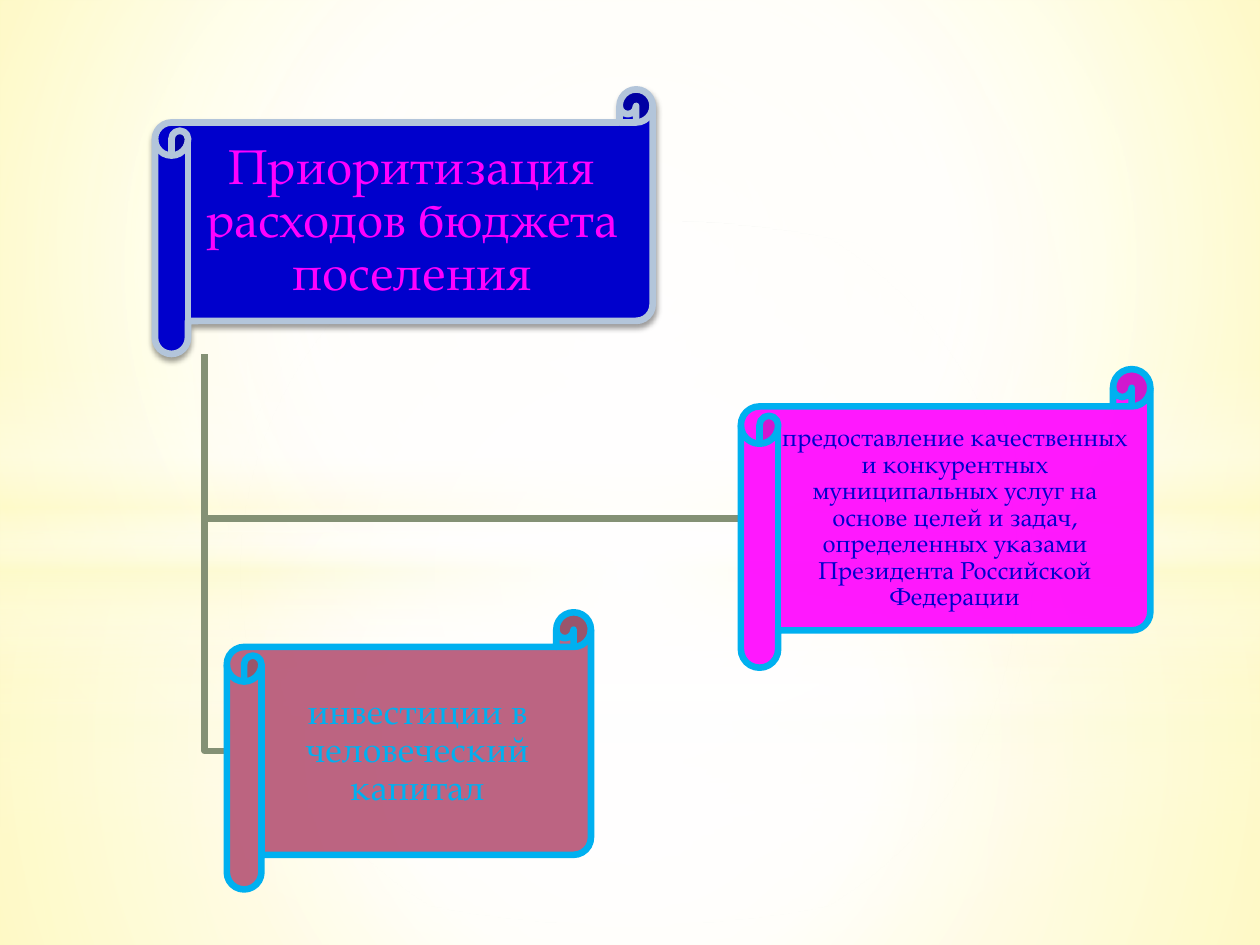
from dataclasses import dataclass

from lxml.etree import SubElement
from pptx import Presentation
from pptx.dml.color import RGBColor
from pptx.enum.shapes import MSO_SHAPE as Preset
from pptx.enum.text import MSO_ANCHOR as Anchor, PP_ALIGN as Align
from pptx.oxml.ns import qn
from pptx.util import Inches, Pt

FONT = "TeX Gyre Pagella"
CENTRE = (50, 50, 50, 50)
BRANCH_WIDTH = 3.78


@dataclass
class Glow:
    """A soft background layer; stops are (position, colour, opacity) in percent."""
    preset: Preset
    top: float
    height: float
    stops: list
    centre: tuple | None = CENTRE


@dataclass
class Scroll:
    text: str
    box: tuple
    fill: str
    line: str
    line_width: float
    text_color: str
    size: int
    inset: tuple  # horizontal, vertical
    opacity: int = 100
    shadow: bool = False


def rgb(color: str) -> RGBColor:
    return RGBColor.from_string(color)


def add_alpha(color_element, percent: float) -> None:
    SubElement(color_element, qn("a:alpha"), val=str(int(percent * 1000)))


def set_gradient(properties, stops: list, centre: tuple | None) -> None:
    """Rewrite the gradient in shape or background properties."""
    gradient = properties.find(qn("a:gradFill"))
    for child in list(gradient):
        gradient.remove(child)
    stop_list = SubElement(gradient, qn("a:gsLst"))
    for position, color, opacity in stops:
        stop = SubElement(stop_list, qn("a:gs"), pos=str(position * 1000))
        add_alpha(SubElement(stop, qn("a:srgbClr"), val=color), opacity)
    if centre is None:
        SubElement(gradient, qn("a:lin"), ang="5400000", scaled="0")
    else:
        circle = SubElement(gradient, qn("a:path"), path="circle")
        sides = {side: str(value * 1000) for side, value in zip("ltrb", centre)}
        SubElement(circle, qn("a:fillToRect"), **sides)


def add_glow(slide, glow: Glow) -> None:
    shape = slide.shapes.add_shape(
        glow.preset, 0, Inches(glow.top), Inches(10), Inches(glow.height))
    shape.shadow.inherit = False
    shape.line.fill.background()
    shape.fill.gradient()
    set_gradient(shape.element.spPr, glow.stops, glow.centre)


def add_branch(slide, start: tuple, end: tuple) -> None:
    """Draw an elbow that goes down, then right."""
    (left, top), (right, bottom) = start, end
    builder = slide.shapes.build_freeform(Inches(left), Inches(top))
    builder.add_line_segments(
        [(Inches(left), Inches(bottom)), (Inches(right), Inches(bottom))], close=False)
    shape = builder.convert_to_shape()
    shape.shadow.inherit = False
    shape.fill.background()
    shape.line.color.rgb = rgb("849175")
    shape.line.width = Pt(BRANCH_WIDTH)


def add_scroll(slide, scroll: Scroll) -> None:
    shape = slide.shapes.add_shape(
        Preset.HORIZONTAL_SCROLL, *(Inches(value) for value in scroll.box))
    shape.shadow.inherit = False
    shape.fill.solid()
    shape.fill.fore_color.rgb = rgb(scroll.fill)
    properties = shape.element.spPr
    add_alpha(properties.find(qn("a:solidFill"))[0], scroll.opacity)
    shape.line.color.rgb = rgb(scroll.line)
    shape.line.width = Pt(scroll.line_width)
    if scroll.shadow:
        shadow = SubElement(
            properties.find(qn("a:effectLst")), qn("a:outerShdw"),
            blurRad=str(Pt(3.5)), dist=str(Pt(2)), dir="5400000", rotWithShape="0")
        add_alpha(SubElement(shadow, qn("a:srgbClr"), val="000000"), 38)

    frame = shape.text_frame
    frame.word_wrap = True
    frame.vertical_anchor = Anchor.MIDDLE
    horizontal, vertical = scroll.inset
    frame.margin_left = frame.margin_right = Inches(horizontal)
    frame.margin_top = frame.margin_bottom = Inches(vertical)
    paragraph = frame.paragraphs[0]
    paragraph.text = scroll.text
    paragraph.alignment = Align.CENTER
    paragraph.line_spacing = 0.9
    paragraph.font.name = FONT
    paragraph.font.size = Pt(scroll.size)
    paragraph.font.color.rgb = rgb(scroll.text_color)


def glow_set(split: float, band_top: float, extra: int, ellipse_stop: int) -> list[Glow]:
    """Lower and upper halves, a horizontal band and a central ellipse."""
    white, cream = "FFFFFF", "FEFAC9"
    lower = [(0, white, 91 + extra), (37, white, 76 + extra), (100, cream, 79 + extra)]
    upper = [(0, white, 89 + extra), (48, white, 62 + extra), (100, cream, 79 + extra)]
    band = [(0, white, 0), (29, white, 30), (45, cream, 40),
            (55, white, 26), (65, cream, 60), (100, white, 0)]
    return [
        Glow(Preset.RECTANGLE, split, 7.5 - split, lower),
        Glow(Preset.RECTANGLE, 0, split, upper),
        Glow(Preset.RECTANGLE, band_top, 2.5, band, None),
        Glow(Preset.OVAL, 1.75, 5.58, [(0, white, 100), (ellipse_stop, white, 0)]),
    ]


ROOT = Scroll("Приоритизация расходов бюджета поселения", (1.23, 0.71, 3.95, 2.1),
              "0000CC", "B3C5DA", 3.82, "FF00FF", 28, (0.06, 0.04), shadow=True)
CHILDREN = [
    Scroll("инвестиции в человеческий капитал", (1.8, 4.86, 2.89, 2.2),
           "B55475", "00B0F0", BRANCH_WIDTH, "00B0F0", 20, (0.04, 0.03), 90),
    Scroll("предоставление качественных и конкурентных муниципальных услуг на основе "
           "целей и задач, определенных указами Президента Российской Федерации",
           (5.88, 2.93, 3.25, 2.37),
           "FF00FF", "00B0F0", BRANCH_WIDTH, "0000CC", 14, (0.03, 0.02), 90),
]


def main() -> None:
    presentation = Presentation()
    presentation.slide_width, presentation.slide_height = Inches(10), Inches(7.5)
    slide = presentation.slides.add_slide(presentation.slide_layouts[6])

    # Background
    slide.background.fill.gradient()
    set_gradient(slide.element.find(".//" + qn("p:bgPr")),
                 [(0, "FFF9B5", 100), (60, "FFFFFF", 100), (100, "FFF46F", 100)],
                 (20, 10, 20, 60))
    for glow in glow_set(5.58, 4.12, 0, 56) + glow_set(4.23, 2.9, 1, 54):
        add_glow(slide, glow)

    # Hierarchy: the trunk leaves the root a tenth of its width from the left
    left, top, width, height = ROOT.box
    trunk = (left + width / 10, top + height)
    add_scroll(slide, ROOT)
    for child in CHILDREN:
        left, top, _, height = child.box
        add_branch(slide, trunk, (left, top + height / 2))
        add_scroll(slide, child)

    presentation.save("out.pptx")


if __name__ == "__main__":
    main()
